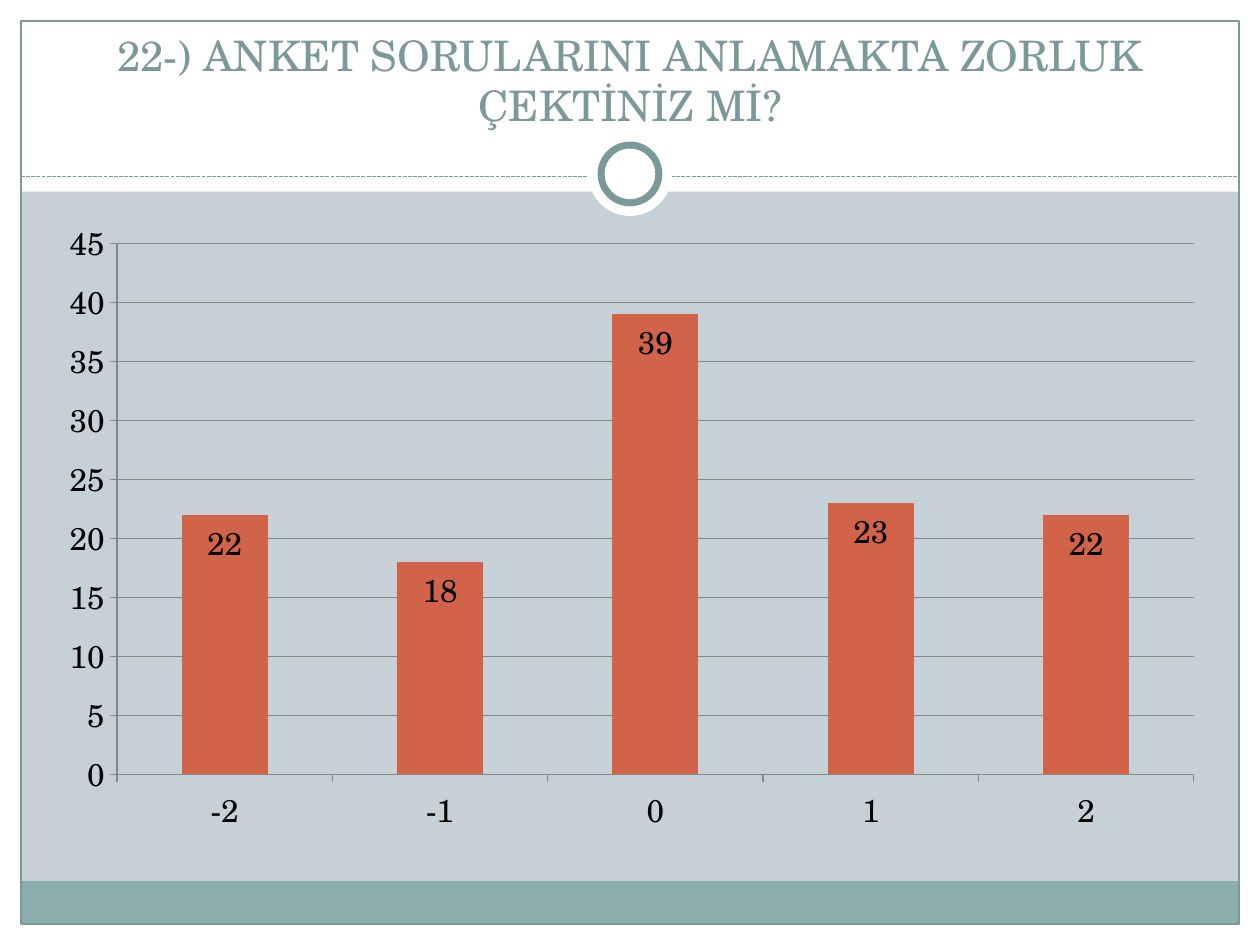
from lxml import etree
from pptx import Presentation
from pptx.chart.data import CategoryChartData
from pptx.dml.color import RGBColor
from pptx.enum.chart import XL_CHART_TYPE, XL_LABEL_POSITION, XL_TICK_MARK
from pptx.enum.dml import MSO_LINE
from pptx.enum.shapes import MSO_CONNECTOR, MSO_SHAPE
from pptx.enum.text import MSO_ANCHOR, MSO_AUTO_SIZE, PP_ALIGN
from pptx.oxml.ns import qn
from pptx.util import Pt

RECTANGLE, OVAL = MSO_SHAPE.RECTANGLE, MSO_SHAPE.OVAL
COLUMNS = XL_CHART_TYPE.COLUMN_CLUSTERED
INSIDE_END = XL_LABEL_POSITION.INSIDE_END
TICK_OUTSIDE, TICK_NONE = XL_TICK_MARK.OUTSIDE, XL_TICK_MARK.NONE
DASH = MSO_LINE.SQUARE_DOT

WIDTH, HEIGHT, MARGIN = 720, 540, 12
WHITE, BLACK, GREY = "FFFFFF", "000000", "878787"
TEAL, BAND, BACKGROUND, ORANGE = "7C999A", "8CADAE", "C5D1D7", "D16349"


def color(value):
    return RGBColor.from_string(value)


def points(*lengths):
    return [Pt(length) for length in lengths]


class SlideBuilder:
    font = "TeX Gyre Schola"

    def __init__(self, slide, background):
        self.slide = slide
        fill = slide.background.fill
        fill.solid()
        fill.fore_color.rgb = color(background)

    def style_line(self, line, line_color, width=0.75):
        line.color.rgb = color(line_color)
        line.width = Pt(width)

    def style_font(self, font, size, font_color):
        font.name = self.font
        font.size = Pt(size)
        font.bold = False
        font.color.rgb = color(font_color)

    def shape(self, kind, box, fill=None, line=None, line_width=0.75):
        shape = self.slide.shapes.add_shape(kind, *points(*box))
        shape.shadow.inherit = False
        if fill:
            shape.fill.solid()
            shape.fill.fore_color.rgb = color(fill)
        else:
            shape.fill.background()
        if line:
            self.style_line(shape.line, line, line_width)
        else:
            shape.line.fill.background()

    def dashed_line(self, start, end, line_color):
        connector = self.slide.shapes.add_connector(
            MSO_CONNECTOR.STRAIGHT, *points(*start, *end))
        self.style_line(connector.line, line_color)
        connector.line.dash_style = DASH
        etree.SubElement(connector.element.spPr, qn("a:effectLst"))

    def title(self, text, box, size, font_color):
        title = self.slide.shapes.title
        title.left, title.top, title.width, title.height = points(*box)
        frame = title.text_frame
        frame.word_wrap = True
        frame.auto_size = MSO_AUTO_SIZE.NONE
        frame.vertical_anchor = MSO_ANCHOR.BOTTOM
        paragraph = frame.paragraphs[0]
        paragraph.alignment = PP_ALIGN.CENTER
        run = paragraph.add_run()
        run.text = text
        self.style_font(run.font, size, font_color)
        # Bring the title in front of the frame
        title.element.getparent().append(title.element)

    def column_chart(self, box, categories, values, fill, plot):
        data = CategoryChartData()
        data.categories = categories
        data.add_series("Series 1", values)
        chart = self.slide.shapes.add_chart(COLUMNS, *points(*box), data).chart
        chart.has_legend = False
        chart.has_title = False
        self.style_font(chart.font, 18, BLACK)

        # Axes
        for axis in (chart.category_axis, chart.value_axis):
            axis.major_tick_mark = TICK_OUTSIDE
            axis.minor_tick_mark = TICK_NONE
            self.style_line(axis.format.line, GREY)
        chart.value_axis.minimum_scale = 0
        chart.value_axis.maximum_scale = 45
        chart.value_axis.major_unit = 5
        chart.value_axis.has_major_gridlines = True
        self.style_line(chart.value_axis.major_gridlines.format.line, GREY)

        # Columns and labels
        columns = chart.plots[0]
        columns.gap_width = 150
        columns.vary_by_categories = False
        series = columns.series[0]
        series.format.fill.solid()
        series.format.fill.fore_color.rgb = color(fill)
        labels = series.data_labels
        labels.show_value = True
        labels.position = INSIDE_END
        self.style_font(labels.font, 18, BLACK)
        self.place_plot(chart, plot)

    def place_plot(self, chart, plot):
        area = chart.element.find(".//" + qn("c:plotArea"))
        layout = area.find(qn("c:layout"))
        if layout is None:
            layout = etree.Element(qn("c:layout"))
            area.insert(0, layout)
        manual = etree.SubElement(layout, qn("c:manualLayout"))
        settings = [("layoutTarget", "inner"), ("xMode", "edge"),
                    ("yMode", "edge"), *zip("xywh", plot)]
        for name, value in settings:
            etree.SubElement(manual, qn("c:" + name), val=str(value))


def main():
    presentation = Presentation()
    presentation.slide_width, presentation.slide_height = points(WIDTH, HEIGHT)
    slide = presentation.slides.add_slide(presentation.slide_layouts[5])
    builder = SlideBuilder(slide, BACKGROUND)

    # White margins and header
    inner_width, inner_height = WIDTH - 2 * MARGIN, HEIGHT - 2 * MARGIN
    for box in ((0, HEIGHT - MARGIN, WIDTH, MARGIN),
                (0, 0, WIDTH, 109.5),
                (0, 0, MARGIN, HEIGHT),
                (WIDTH - MARGIN, 0, MARGIN, HEIGHT)):
        builder.shape(RECTANGLE, box, WHITE)

    # Footer band, frame and divider
    builder.shape(RECTANGLE, (MARGIN, 503.5, inner_width, 24.5), BAND)
    builder.shape(RECTANGLE, (MARGIN, MARGIN, inner_width, inner_height),
                  line=TEAL)
    builder.dashed_line((MARGIN, 100.8), (WIDTH - MARGIN, 100.8), TEAL)

    # Ring on the divider
    center_x, center_y = WIDTH / 2, 99.4
    for diameter, line in ((48, None), (33, TEAL)):
        builder.shape(OVAL, (center_x - diameter / 2, center_y - diameter / 2,
                             diameter, diameter), WHITE, line, 4)

    builder.title("22-) ANKET SORULARINI ANLAMAKTA ZORLUK ÇEKTİNİZ Mİ?",
                  (24, 18, 672, 60), 24, TEAL)
    builder.column_chart((24, 120, 669.6, 360), ["-2", "-1", "0", "1", "2"],
                         [22, 18, 39, 23, 22], ORANGE,
                         (0.064, 0.053, 0.919, 0.843))
    presentation.save("out.pptx")


if __name__ == "__main__":
    main()
